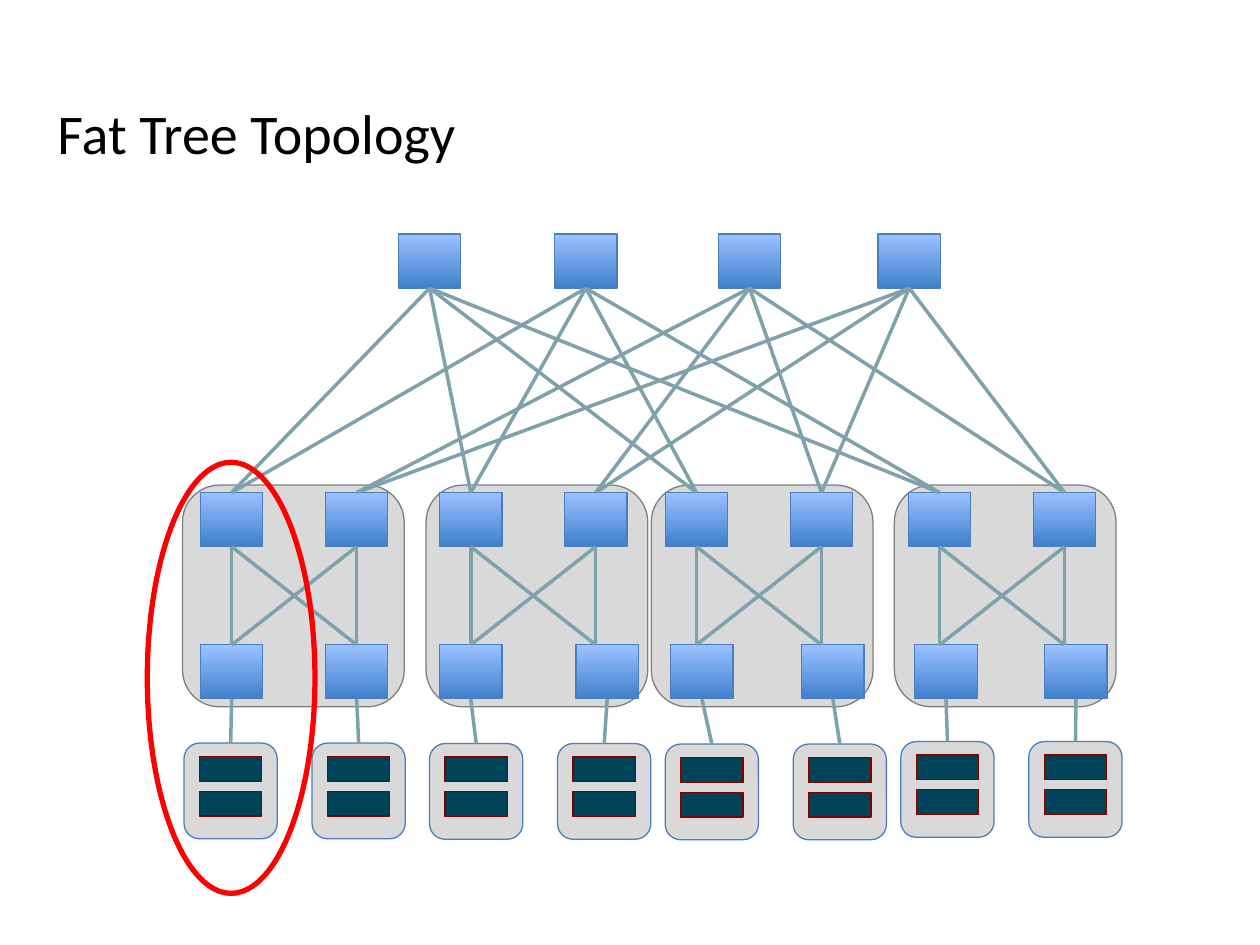
from dataclasses import dataclass

from lxml.etree import SubElement
from pptx import Presentation
from pptx.dml.color import RGBColor
from pptx.enum.shapes import MSO_CONNECTOR, MSO_SHAPE
from pptx.enum.text import MSO_ANCHOR
from pptx.oxml.ns import qn
from pptx.util import Cm, Pt


@dataclass(frozen=True)
class Theme:
    font: str = "Calibri"
    title_size: int = 32
    text: str = "000000"
    panel: str = "D9D9D9"
    pod_line: str = "7F7F7F"
    switch_top: str = "9BC1FF"
    switch_bottom: str = "3F80CD"
    switch_line: str = "4A7EBB"
    server: str = "004359"
    server_line: str = "800000"
    link: str = "7FA1AC"
    highlight: str = "FF0000"
    thin: float = 0.75
    link_width: float = 2
    highlight_width: float = 3


THEME = Theme()
TOP, BOTTOM = 0, 2  # connection sites

SWITCH_W, SWITCH_H = 1.26, 1.09
CORE_Y, AGG_Y, EDGE_Y = 4.72, 9.93, 13.0
CORE_X = (8.03, 11.18, 14.48, 17.7)
POD_Y, POD_SIZE = 9.78, 4.47
AGG_GAP, RACK_GAP = 2.52, 2.58
# pod left, first aggregation switch left, edge switch lefts, first rack left, rack top
PODS = (
    (3.68, 4.04, (4.04, 6.56), 3.71, 14.98),
    (8.59, 8.86, (8.86, 11.61), 8.66, 14.99),
    (13.13, 13.41, (13.52, 16.16), 13.41, 15.0),
    (18.03, 18.31, (18.44, 21.06), 18.16, 14.95),
)


def rgb(value):
    return RGBColor.from_string(value)


def add_box(slide, kind, x, y, w, h, fill, line, width=THEME.thin):
    """Add a preset shape; a fill of None leaves it hollow."""
    s = slide.shapes.add_shape(kind, Cm(x), Cm(y), Cm(w), Cm(h))
    s.shadow.inherit = False
    if fill is None:
        s.fill.background()
    else:
        s.fill.solid()
        s.fill.fore_color.rgb = rgb(fill)
    s.line.color.rgb = rgb(line)
    s.line.width = Pt(width)
    return s


def add_switch(slide, x, y):
    s = add_box(slide, MSO_SHAPE.RECTANGLE, x, y, SWITCH_W, SWITCH_H,
                THEME.switch_top, THEME.switch_line)
    s.fill.gradient()
    s.fill.gradient_angle = 270
    for stop, color in zip(s.fill.gradient_stops,
                           (THEME.switch_top, THEME.switch_bottom)):
        stop.color.rgb = rgb(color)
    return s


def add_rack(slide, x, y):
    rack = add_box(slide, MSO_SHAPE.ROUNDED_RECTANGLE, x, y, 1.88, 1.93,
                   THEME.panel, THEME.switch_line)
    for dy in (0.27, 0.97):
        add_box(slide, MSO_SHAPE.RECTANGLE, x + 0.31, y + dy, 1.26, 0.5,
                THEME.server, THEME.server_line)
    return rack


def middle(s):
    return s.left + s.width // 2


def add_link(slide, lower, upper, x=None):
    """Link the top of lower to the bottom of upper; x moves the lower end."""
    x = middle(lower) if x is None else x
    c = slide.shapes.add_connector(MSO_CONNECTOR.STRAIGHT, x, lower.top,
                                   middle(upper), upper.top + upper.height)
    if x == middle(lower):
        c.begin_connect(lower, TOP)
    c.end_connect(upper, BOTTOM)
    c.line.color.rgb = rgb(THEME.link)
    c.line.width = Pt(THEME.link_width)
    SubElement(c._element.spPr, qn("a:effectLst"))


def add_title(slide, text):
    tf = slide.shapes.add_textbox(Cm(0.91), Cm(1.27), Cm(23.57), Cm(2.77)).text_frame
    tf.word_wrap = True
    tf.vertical_anchor = MSO_ANCHOR.MIDDLE
    tf.text = text
    font = tf.paragraphs[0].runs[0].font
    font.name = THEME.font
    font.size = Pt(THEME.title_size)
    font.color.rgb = rgb(THEME.text)


def add_pod(slide, cores, pod):
    """Add the two switch layers and racks of a pod, and all of their links."""
    pod_x, agg_x, edge_xs, rack_x, rack_y = pod
    add_box(slide, MSO_SHAPE.ROUNDED_RECTANGLE, pod_x, POD_Y, POD_SIZE, POD_SIZE,
            THEME.panel, THEME.pod_line)
    aggs = [add_switch(slide, agg_x + i * AGG_GAP, AGG_Y) for i in range(2)]
    edges = [add_switch(slide, x, EDGE_Y) for x in edge_xs]
    racks = [add_rack(slide, rack_x + i * RACK_GAP, rack_y) for i in range(2)]

    for i, agg in enumerate(aggs):
        for core in cores[2 * i:2 * i + 2]:
            add_link(slide, agg, core)
        for edge, agg_above in zip(edges, aggs):
            add_link(slide, edge, agg, middle(agg_above))
    for rack, edge in zip(racks, edges):
        add_link(slide, rack, edge)


def main():
    prs = Presentation()
    prs.slide_width, prs.slide_height = Cm(25.4), Cm(19.05)
    slide = prs.slides.add_slide(prs.slide_layouts[6])

    add_title(slide, "Fat Tree Topology")
    cores = [add_switch(slide, x, CORE_Y) for x in CORE_X]
    for pod in PODS:
        add_pod(slide, cores, pod)
    add_box(slide, MSO_SHAPE.OVAL, 2.97, 9.32, 3.38, 8.69,
            None, THEME.highlight, THEME.highlight_width)

    prs.save("out.pptx")


if __name__ == "__main__":
    main()
